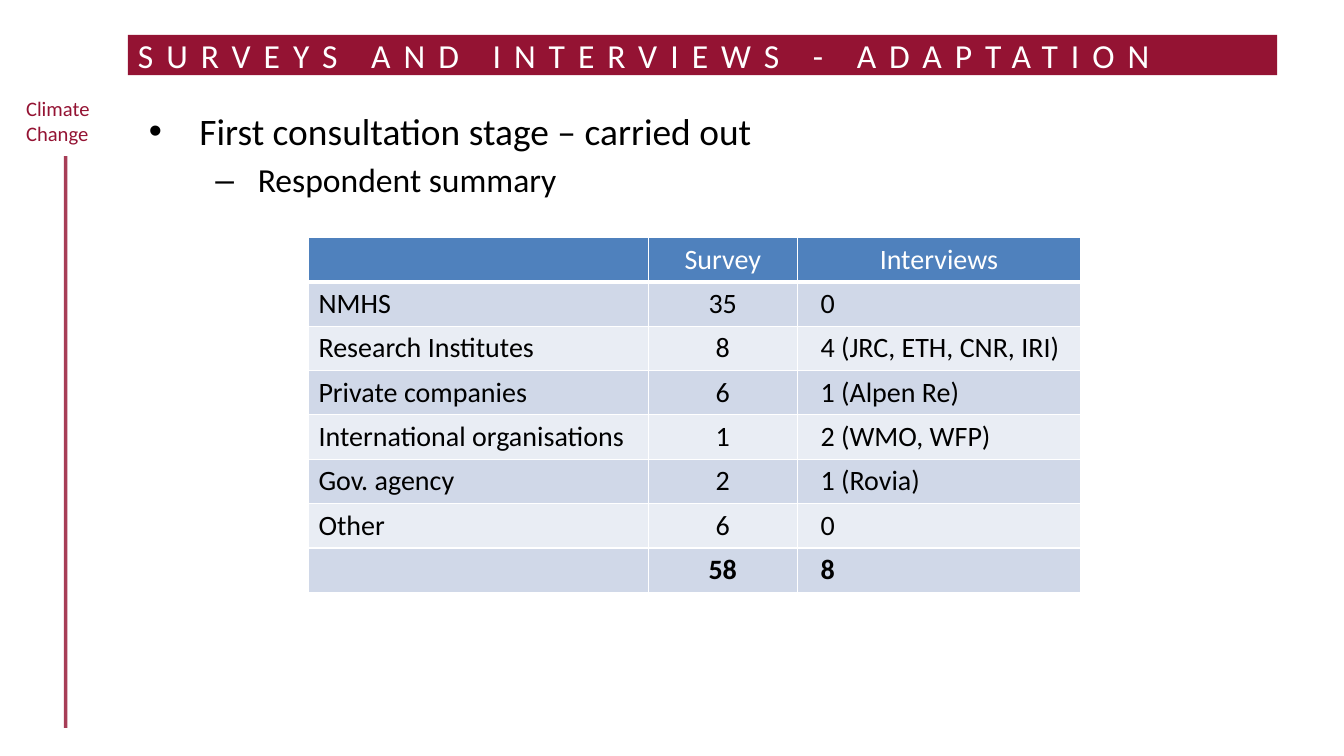
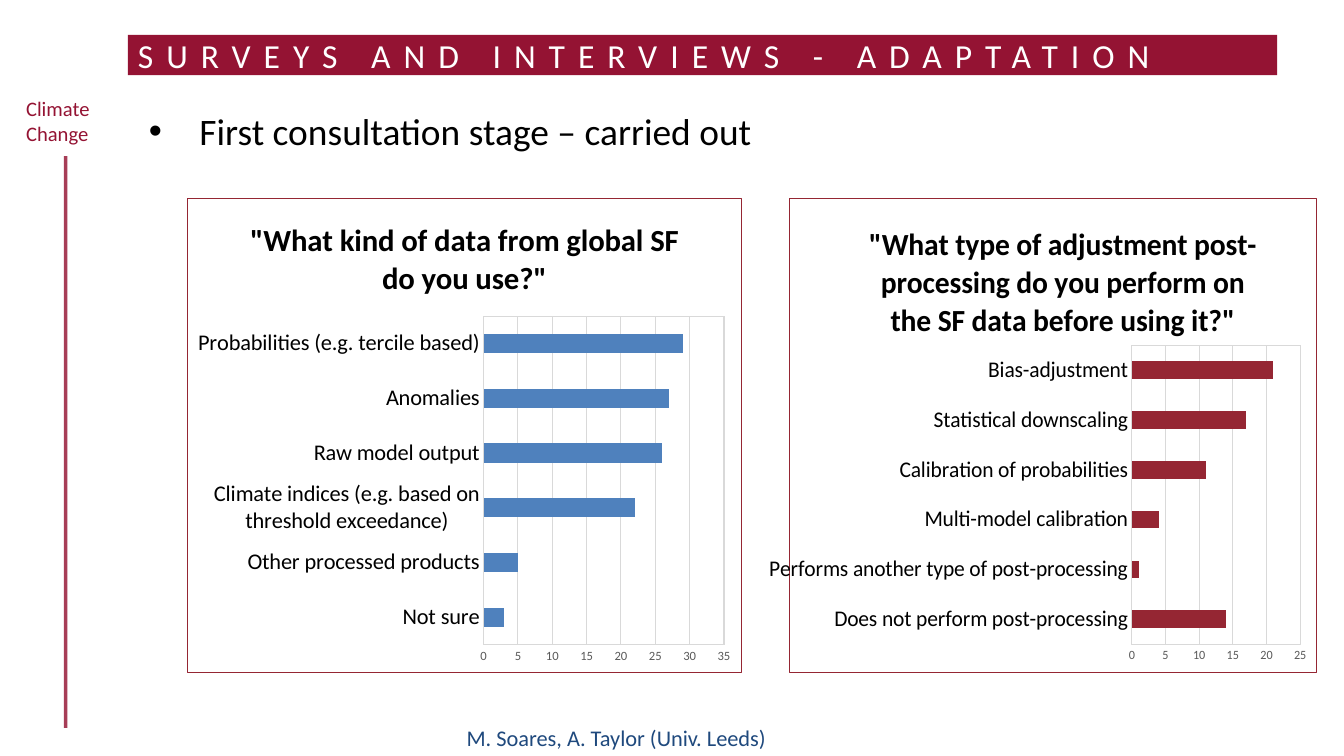
"""Build two slides on the survey and interview results."""
import lxml.etree
import pptx
import pptx.chart.data
import pptx.dml.color
import pptx.enum.chart
import pptx.enum.shapes
import pptx.enum.text
import pptx.oxml.ns
import pptx.util

COLORS = {
    "crimson": "941333", "chart_red": "952633", "blue": "4F81BD", "navy": "1F497D",
    "band_dark": "D0D8E8", "band_light": "E9EDF4", "grid": "D9D9D9", "grey": "595959",
    "white": "FFFFFF", "black": "000000",
}
FONT = "Calibri"
WIDTH, HEIGHT = pptx.util.Inches(13.333), pptx.util.Inches(7.5)
TITLE = "SURVEYS AND INTERVIEWS - ADAPTATION"
STAGE = "First consultation stage – carried out"
LEVELS = [
    {"char": "•", "size": 26.7, "left": 0.5, "hang": 0.5},
    {"char": "–", "size": 24, "left": 1.08, "hang": 0.42},
]
COLUMNS, ROW = [25.28, 11.1, 21.07], 5.87
RESPONDENTS = [
    ("", "Survey", "Interviews"),
    ("NMHS", "35", "0"),
    ("Research Institutes", "8", "4 (JRC, ETH, CNR, IRI)"),
    ("Private companies", "6", "1 (Alpen Re)"),
    ("International organisations", "1", "2 (WMO, WFP)"),
    ("Gov. agency", "2", "1 (Rovia)"),
    ("Other", "6", "0"),
    ("", "58", "8"),
]
CHARTS = [
    {
        "x": 13.88, "w": 41.33, "color": "blue", "top": 35,
        "title": '"What kind of data from global SF do you use?"',
        "data": {
            "Not sure": 3, "Other processed products": 5,
            "Climate indices (e.g. based on threshold exceedance)": 22,
            "Raw model output": 26, "Anomalies": 27,
            "Probabilities (e.g. tercile based)": 29,
        },
    },
    {
        "x": 57.23, "w": 40.73, "color": "chart_red", "top": 25,
        "title": '"What type of adjustment post-processing do you perform '
                 'on the SF data before using it?"',
        "data": {
            "Does not perform post-processing": 14,
            "Performs another type of post-processing": 1,
            "Multi-model calibration": 4, "Calibration of probabilities": 11,
            "Statistical downscaling": 17, "Bias-adjustment": 21,
        },
        "title_layout": {"x": 0.14, "y": 0.04},
        "plot_layout": {"x": 0.65, "y": 0.31, "w": 0.32, "h": 0.63},
    },
]


def px(share):
    """Turn a percentage of the slide width into a length."""
    return round(WIDTH * share / 100)


def py(share):
    """Turn a percentage of the slide height into a length."""
    return round(HEIGHT * share / 100)


def box(x, y, w, h):
    """Turn four percentages into left, top, width and height."""
    return px(x), py(y), px(w), py(h)


def rgb(name):
    """Look up a named colour."""
    return pptx.dml.color.RGBColor.from_string(COLORS[name])


def sub(parent, tag, **attrs):
    """Append an XML child with attributes."""
    el = lxml.etree.SubElement(parent, pptx.oxml.ns.qn(tag))
    for key, value in attrs.items():
        el.set(key, str(value))
    return el


def set_attrs(obj, values):
    """Set attributes from a dict of format values."""
    for key, value in values.items():
        setattr(obj, key, value)


def style(font, size, color="black", bold=False):
    """Format a font."""
    set_attrs(font, {"name": FONT, "size": pptx.util.Pt(size), "bold": bold})
    font.color.rgb = rgb(color)


def write(p, text, size, color="black", bold=False):
    """Add one formatted run to a paragraph."""
    r = p.add_run()
    r.text = text
    style(r.font, size, color, bold)
    return r


def add_text(s, area, lines, size, color):
    """Add a text box with one paragraph per line."""
    tf = s.shapes.add_textbox(*box(*area)).text_frame
    tf.word_wrap = True
    for i, line in enumerate(lines):
        p = tf.add_paragraph() if i else tf.paragraphs[0]
        write(p, line, size, color)


def add_title(s):
    """Add the crimson title band."""
    sp = s.shapes.add_shape(pptx.enum.shapes.MSO_SHAPE.RECTANGLE, *box(9.52, 4.6, 85.5, 5.33))
    sp.shadow.inherit = False
    sp.fill.solid()
    sp.fill.fore_color.rgb = rgb("crimson")
    sp.line.fill.background()
    tf = sp.text_frame
    set_attrs(tf, {"margin_top": 0, "margin_bottom": 0, "word_wrap": True,
                   "vertical_anchor": pptx.enum.text.MSO_ANCHOR.MIDDLE})
    p = tf.paragraphs[0]
    p.alignment = pptx.enum.text.PP_ALIGN.LEFT
    write(p, TITLE, 24, "white").font._element.set("spc", "930")


def add_rule(s):
    """Add the translucent vertical rule at the left."""
    sp = s.shapes.add_connector(pptx.enum.shapes.MSO_CONNECTOR.STRAIGHT,
                                px(4.88), py(20.67), px(4.88), py(96.27))
    sp.line.width = pptx.util.Pt(2.5)
    sp.line.color.rgb = rgb("crimson")
    color = sp._element.spPr.find(".//" + pptx.oxml.ns.qn("a:srgbClr"))
    sub(color, "a:alpha", val=81000)
    sub(sp._element.spPr, "a:effectLst")


def add_bullets(s, lines):
    """Add the bulleted body, one level deeper per line."""
    tf = s.shapes.add_textbox(*box(10.35, 13.6, 84.68, 74.27)).text_frame
    tf.word_wrap = True
    for i, (line, level) in enumerate(zip(lines, LEVELS)):
        p = tf.add_paragraph() if i else tf.paragraphs[0]
        pPr = p._p.get_or_add_pPr()
        pPr.set("marL", str(pptx.util.Inches(level["left"])))
        pPr.set("indent", str(-pptx.util.Inches(level["hang"])))
        sub(pPr, "a:buFont", typeface="Arial")
        sub(pPr, "a:buChar", char=level["char"])
        if i:
            p.space_before = pptx.util.Pt(level["size"] * 0.2)
        write(p, line, level["size"])


def add_slide(prs, lines):
    """Add a blank slide with the shared frame and body text."""
    s = prs.slides.add_slide(prs.slide_layouts[6])
    add_rule(s)
    add_text(s, (1.2, 12, 9.6, 7.87), ["Climate", "Change"], 14.7, "crimson")
    add_bullets(s, lines)
    add_title(s)
    return s


def border(cell, header):
    """Draw white cell borders, thicker below the header."""
    tcPr = cell._tc.get_or_add_tcPr()
    for side in "LRTB":
        points = 3 if header and side == "B" else 1
        ln = sub(tcPr, "a:ln" + side, w=pptx.util.Pt(points))
        sub(sub(ln, "a:solidFill"), "a:srgbClr", val=COLORS["white"])


def add_table(s, rows):
    """Add the respondent table with banded rows and a bold total."""
    area = box(22.95, 31.4, sum(COLUMNS), ROW * len(rows))
    table = s.shapes.add_table(len(rows), len(COLUMNS), *area).table
    for column, width in zip(table.columns, COLUMNS):
        column.width = px(width)
    align = pptx.enum.text.PP_ALIGN
    for i, row in enumerate(rows):
        table.rows[i].height = py(ROW)
        fill = "blue" if i == 0 else "band_dark" if i % 2 else "band_light"
        for j, text in enumerate(row):
            cell = table.cell(i, j)
            border(cell, i == 0)
            cell.fill.solid()
            cell.fill.fore_color.rgb = rgb(fill)
            if i and j == 2:
                cell.margin_left = pptx.util.Inches(0.23)
            p = cell.text_frame.paragraphs[0]
            p.alignment = align.CENTER if j == 1 or (j and i == 0) else align.LEFT
            write(p, text, 20, "black" if i else "white", i == len(rows) - 1)


def outline(color):
    """Make chart shape properties with a thin line and no fill."""
    spPr = pptx.oxml.parse_xml("<c:spPr %s/>" % pptx.oxml.ns.nsdecls("c", "a"))
    sub(spPr, "a:noFill")
    ln = sub(spPr, "a:ln", w=pptx.util.Pt(0.75))
    sub(sub(ln, "a:solidFill"), "a:srgbClr", val=COLORS[color])
    return spPr


def place(el, index, values, inner=False):
    """Give a chart part a manual layout."""
    for old in el.findall(pptx.oxml.ns.qn("c:layout")):
        el.remove(old)
    layout = pptx.oxml.parse_xml("<c:layout %s/>" % pptx.oxml.ns.nsdecls("c"))
    manual = sub(layout, "c:manualLayout")
    if inner:
        sub(manual, "c:layoutTarget", val="inner")
    for key in "xy":
        sub(manual, "c:%sMode" % key, val="edge")
    for key, value in values.items():
        sub(manual, "c:" + key, val=value)
    el.insert(index, layout)


def format_axes(chart, top):
    """Format the category and value axes."""
    kinds = pptx.enum.chart
    for axis, size, color in ((chart.category_axis, 16, "black"),
                              (chart.value_axis, 9, "grey")):
        set_attrs(axis, {"major_tick_mark": kinds.XL_TICK_MARK.NONE,
                         "minor_tick_mark": kinds.XL_TICK_MARK.NONE})
        style(axis.tick_labels.font, size, color)
    chart.category_axis.has_major_gridlines = False
    set_attrs(chart.value_axis, {"minimum_scale": 0, "maximum_scale": top, "major_unit": 5,
                                 "has_major_gridlines": True})
    chart.value_axis.format.line.fill.background()
    for part in (chart.category_axis, chart.value_axis.major_gridlines):
        part.format.line.width = pptx.util.Pt(0.75)
        part.format.line.color.rgb = rgb("grid")


def add_chart(s, spec_values):
    """Add one framed bar chart."""
    v = spec_values
    data = pptx.chart.data.CategoryChartData()
    data.categories = list(v["data"])
    data.add_series("Series 1", list(v["data"].values()))
    chart = s.shapes.add_chart(pptx.enum.chart.XL_CHART_TYPE.BAR_CLUSTERED,
                               *box(v["x"], 26.13, v["w"], 62.93), data).chart
    style(chart.font, 10)
    set_attrs(chart, {"has_legend": False, "has_title": True})
    title = chart.chart_title
    title.include_in_layout = False
    write(title.text_frame.paragraphs[0], v["title"], 22, bold=True)
    set_attrs(chart.plots[0], {"gap_width": 182, "vary_by_categories": False})
    fill = chart.plots[0].series[0].format.fill
    fill.solid()
    fill.fore_color.rgb = rgb(v["color"])
    format_axes(chart, v["top"])
    body = chart._chartSpace.find(pptx.oxml.ns.qn("c:chart"))
    plot_area = body.find(pptx.oxml.ns.qn("c:plotArea"))
    body.addnext(outline("chart_red"))
    plot_area.append(outline("grid"))
    if "plot_layout" in v:
        place(title._element, 1, v["title_layout"])
        place(plot_area, 0, v["plot_layout"], inner=True)


def main():
    """Build and save the presentation."""
    prs = pptx.Presentation()
    set_attrs(prs, {"slide_width": WIDTH, "slide_height": HEIGHT})
    add_table(add_slide(prs, [STAGE, "Respondent summary"]), RESPONDENTS)
    s = add_slide(prs, [STAGE])
    add_text(s, (33.98, 95.07, 24.53, 5.07), ["M. Soares, A. Taylor (Univ. Leeds)"], 16, "navy")
    for values in CHARTS:
        add_chart(s, values)
    prs.save("out.pptx")


if __name__ == "__main__":
    main()
